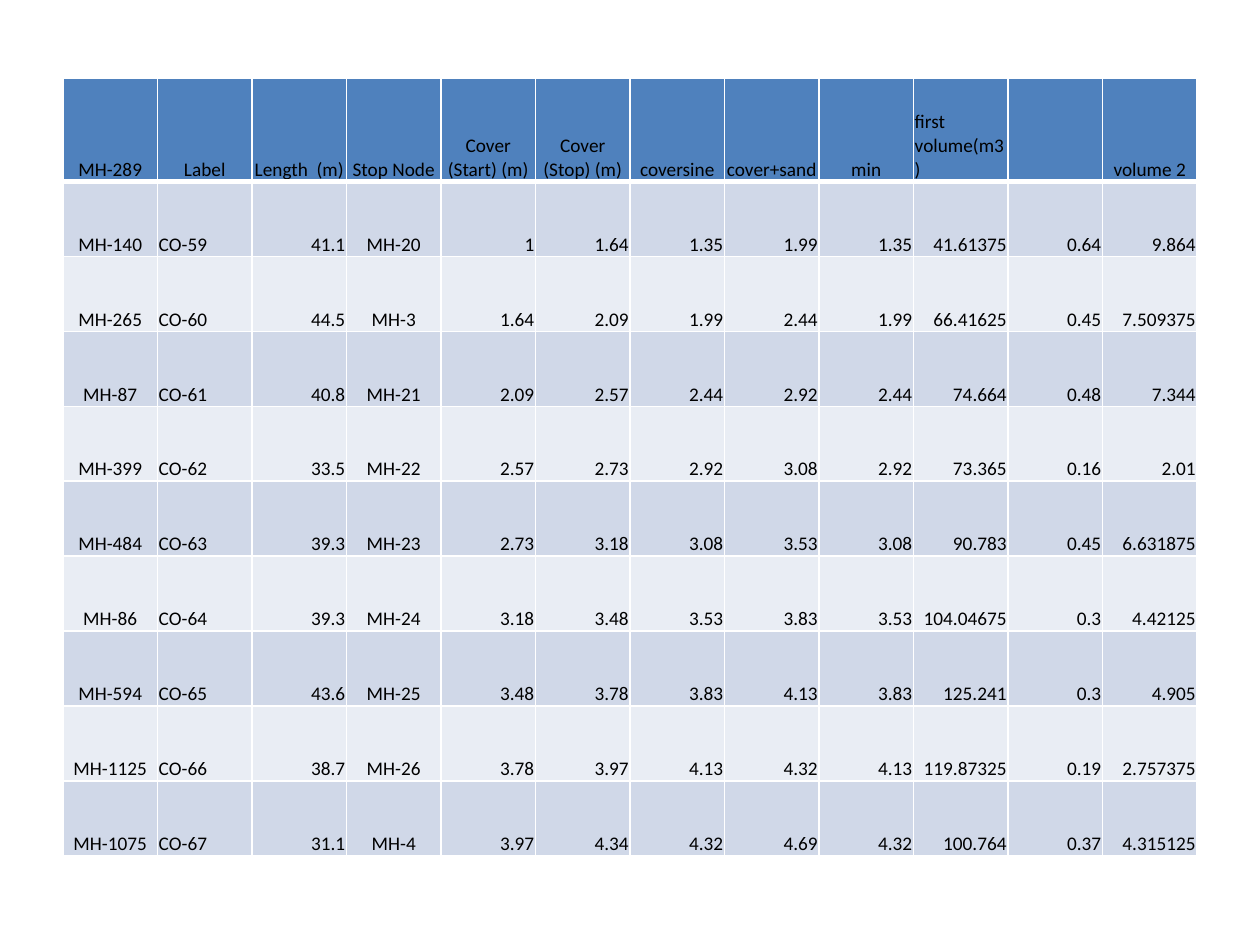
from pptx import Presentation
from pptx.dml.color import RGBColor
from pptx.enum.text import MSO_ANCHOR, PP_ALIGN
from pptx.oxml.ns import qn
from pptx.util import Inches, Pt
from lxml.etree import SubElement

HEADS = ["MH-289", "Label", "Length  (m)", "Stop Node", "Cover (Start) (m)",
         "Cover (Stop) (m)", "coversine", "cover+sand", "min",
         "first volume(m3)", "", "volume 2"]
PIPES = """
MH-140 CO-59 41.1 MH-20 1 1.64 1.35 1.99 1.35 41.61375 0.64 9.864
MH-265 CO-60 44.5 MH-3 1.64 2.09 1.99 2.44 1.99 66.41625 0.45 7.509375
MH-87 CO-61 40.8 MH-21 2.09 2.57 2.44 2.92 2.44 74.664 0.48 7.344
MH-399 CO-62 33.5 MH-22 2.57 2.73 2.92 3.08 2.92 73.365 0.16 2.01
MH-484 CO-63 39.3 MH-23 2.73 3.18 3.08 3.53 3.08 90.783 0.45 6.631875
MH-86 CO-64 39.3 MH-24 3.18 3.48 3.53 3.83 3.53 104.04675 0.3 4.42125
MH-594 CO-65 43.6 MH-25 3.48 3.78 3.83 4.13 3.83 125.241 0.3 4.905
MH-1125 CO-66 38.7 MH-26 3.78 3.97 4.13 4.32 4.13 119.87325 0.19 2.757375
MH-1075 CO-67 31.1 MH-4 3.97 4.34 4.32 4.69 4.32 100.764 0.37 4.315125
"""
ALIGNS = {"l": PP_ALIGN.LEFT, "c": PP_ALIGN.CENTER, "r": PP_ALIGN.RIGHT}


def color(code):
    return RGBColor.from_string(code)


class Sheet:
    """Holds the table style and the current slide."""
    font, size, ink, rule = "Calibri", 11, "000000", "FFFFFF"
    head, bands = "4F81BD", ("E9EDF4", "D0D8E8")

    def __init__(self, slide):
        self.slide = slide

    def border(self, cell, side, width):
        line = SubElement(cell._tc.get_or_add_tcPr(), qn("a:ln" + side),
                          w=str(Pt(width)))
        fill = SubElement(line, qn("a:solidFill"))
        SubElement(fill, qn("a:srgbClr"), val=self.rule)

    def cell(self, cell, text, align, back, top=1, base=1):
        for side, width in zip("LRTB", (1, 1, top, base)):
            self.border(cell, side, width)
        cell.fill.solid()
        cell.fill.fore_color.rgb = color(back)
        cell.vertical_anchor = MSO_ANCHOR.BOTTOM
        cell.margin_left = cell.margin_right = cell.margin_top = Inches(0.01)
        cell.margin_bottom = 0
        cell.text = text
        para = cell.text_frame.paragraphs[0]
        para.alignment = ALIGNS[align]
        font = para.font
        font.name, font.size, font.bold = self.font, Pt(self.size), False
        font.color.rgb = color(self.ink)

    def table(self, heads, rows, left, top, width, tall, step):
        count = len(heads)
        frame = self.slide.shapes.add_table(
            len(rows) + 1, count, Inches(left), Inches(top), Inches(width),
            Inches(tall + step * len(rows)))
        grid = frame.table
        grid.first_row = grid.horz_banding = False
        for col in grid.columns:
            col.width = Inches(width / count)
        for num, row in enumerate(grid.rows):
            row.height = Inches(step if num else tall)
        for col, text in enumerate(heads):
            align = "l" if text.startswith("first") else "c"
            self.cell(grid.cell(0, col), text, align, self.head, base=3)
        for num, row in enumerate(rows, 1):
            for col, (text, align) in enumerate(zip(row, "clrc" + "r" * 8)):
                self.cell(grid.cell(num, col), text, align,
                          self.bands[num % 2], top=3 if num == 1 else 1)


def main():
    deck = Presentation()
    deck.slide_width, deck.slide_height = Inches(10), Inches(7.5)
    sheet = Sheet(deck.slides.add_slide(deck.slide_layouts[6]))
    rows = [line.split() for line in PIPES.strip().splitlines()]
    sheet.table(HEADS, rows, 0.5, 0.62, 9, 0.82, 0.595)
    deck.save("out.pptx")


if __name__ == "__main__":
    main()
